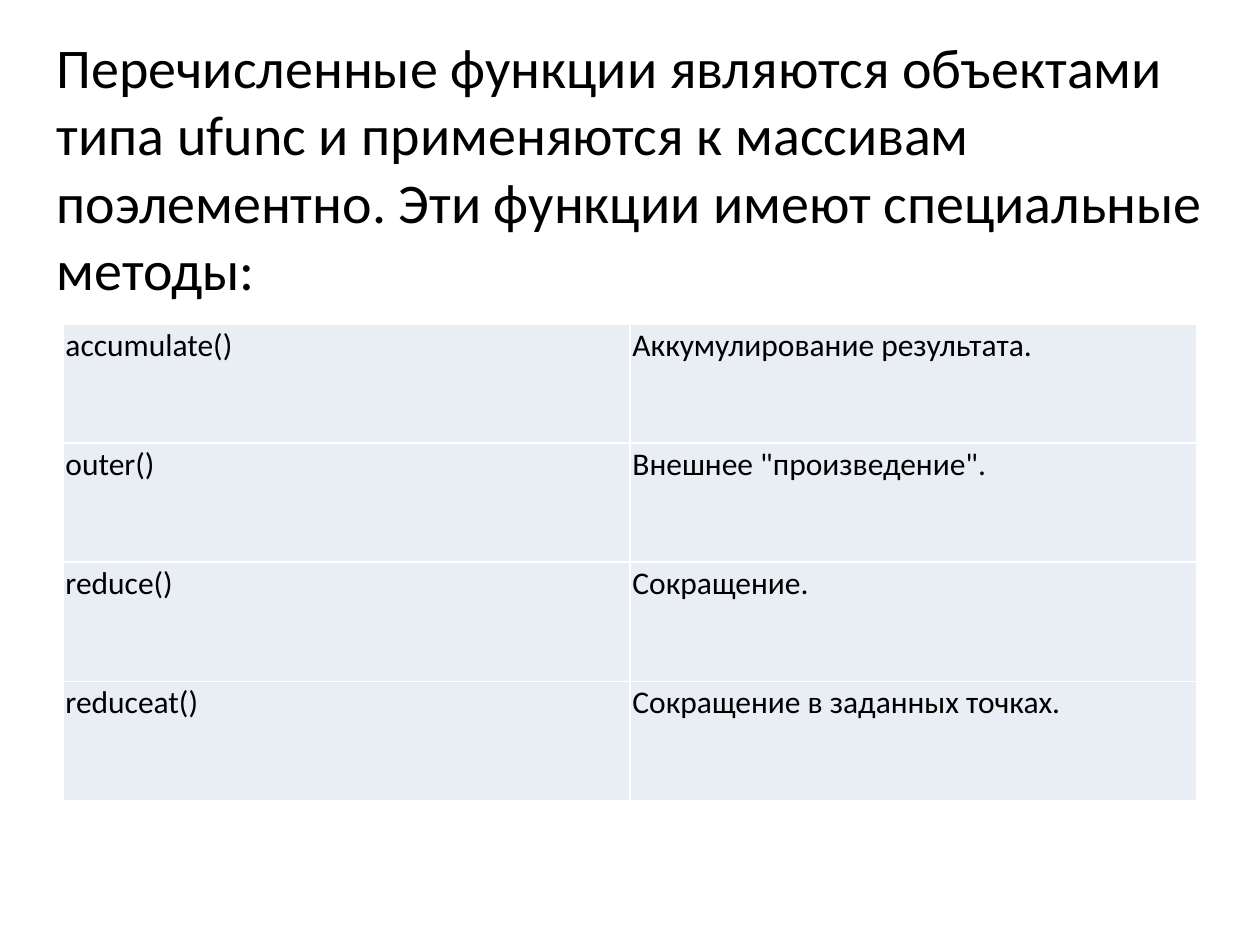
from dataclasses import dataclass

from lxml.etree import SubElement
from pptx import Presentation
from pptx.dml.color import RGBColor
from pptx.enum.text import MSO_ANCHOR, MSO_AUTO_SIZE, PP_ALIGN
from pptx.oxml.ns import qn
from pptx.util import Inches, Pt


@dataclass(frozen=True)
class Theme:
    font: str = "Calibri"
    ink: str = "000000"
    cell_fill: str = "E9EDF4"
    rule: str = "FFFFFF"
    rule_width: float = 1
    heading_size: float = 32
    cell_size: float = 18
    cell_inset: float = 0.02


THEME = Theme()
WIDTH, HEIGHT = Inches(10), Inches(7.5)
TITLE_ONLY = 5

HEADING = (
    "Перечисленные функции являются объектами типа ufunc и применяются "
    "к массивам поэлементно. Эти функции имеют специальные методы:"
)
METHODS = [
    ("accumulate()", "Аккумулирование результата."),
    ("outer()", 'Внешнее "произведение".'),
    ("reduce()", "Сокращение."),
    ("reduceat()", "Сокращение в заданных точках."),
]


def share(left, top, width, height):
    """Turn shares of the slide into a box of lengths."""
    return (int(WIDTH * left), int(HEIGHT * top),
            int(WIDTH * width), int(HEIGHT * height))


def add_run(paragraph, wording, size):
    run = paragraph.add_run()
    run.text = wording
    run.font.name = THEME.font
    run.font.size = Pt(size)
    run.font.color.rgb = RGBColor.from_string(THEME.ink)


def place_heading(slide, box):
    heading = slide.shapes.title
    heading.left, heading.top, heading.width, heading.height = box
    frame = heading.text_frame
    frame.word_wrap = True
    frame.auto_size = MSO_AUTO_SIZE.NONE
    frame.vertical_anchor = MSO_ANCHOR.TOP
    paragraph = frame.paragraphs[0]
    paragraph.alignment = PP_ALIGN.LEFT
    paragraph.space_before = Pt(0.2 * THEME.heading_size)
    add_run(paragraph, HEADING, THEME.heading_size)


def rule_cell(cell):
    """Draw the four borders; they must come before the fill in the XML."""
    properties = cell._tc.get_or_add_tcPr()
    for side in ("a:lnL", "a:lnR", "a:lnT", "a:lnB"):
        line = SubElement(properties, qn(side), w=str(Pt(THEME.rule_width)))
        fill = SubElement(line, qn("a:solidFill"))
        SubElement(fill, qn("a:srgbClr"), val=THEME.rule)


def fill_cell(cell, wording):
    inset = Inches(THEME.cell_inset)
    cell.margin_left = cell.margin_right = inset
    cell.margin_top = cell.margin_bottom = inset
    rule_cell(cell)
    cell.fill.solid()
    cell.fill.fore_color.rgb = RGBColor.from_string(THEME.cell_fill)
    add_run(cell.text_frame.paragraphs[0], wording, THEME.cell_size)


def place_methods(slide, box):
    table = slide.shapes.add_table(len(METHODS), len(METHODS[0]), *box).table
    table.first_row = table.horz_banding = False
    for row, method in enumerate(METHODS):
        for column, wording in enumerate(method):
            fill_cell(table.cell(row, column), wording)


def main():
    deck = Presentation()
    deck.slide_width, deck.slide_height = WIDTH, HEIGHT
    slide = deck.slides.add_slide(deck.slide_layouts[TITLE_ONLY])
    place_heading(slide, share(0.035, 0.028, 0.937, 0.308))
    place_methods(slide, share(0.05, 0.343, 0.9, 0.504))
    deck.save("out.pptx")


if __name__ == "__main__":
    main()
